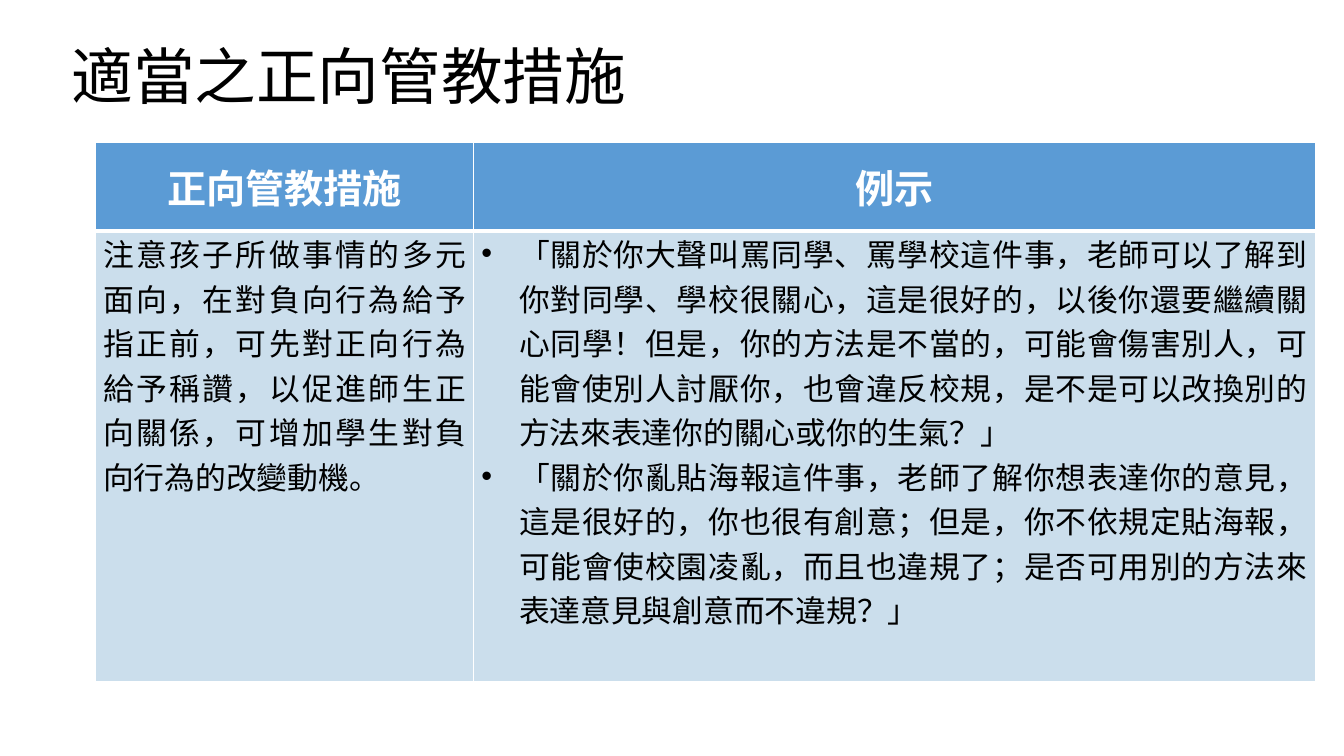
from lxml import etree
from pptx import Presentation
from pptx import util as u
from pptx.dml.color import RGBColor
from pptx.enum import text
from pptx.oxml import ns

Cm, Pt = u.Cm, u.Pt
CJK_FONT = "Noto Sans CJK SC"
WHITE, BLACK, BLUE, PALE_BLUE = "FFFFFF", "000000", "5B9BD5", "CBDEEC"
TITLE_FORMAT = {"name": "Calibri", "size": Pt(44), "bold": False}
HEADER_FORMAT = {"name": CJK_FONT, "size": Pt(28), "bold": True}
BODY_FORMAT = {"name": CJK_FONT, "size": Pt(22), "bold": False}
CELL_MARGINS = {"margin_left": Cm(0.19), "margin_right": Cm(0.19),
                "margin_top": 0, "margin_bottom": 0}
COLUMN_WIDTHS = [Cm(9.53), Cm(21.21)]
ROW_HEIGHTS = [Cm(2.24), Cm(11.35)]

TITLE = "適當之正向管教措施"
HEADERS = ["正向管教措施", "例示"]
MEASURE = ("注意孩子所做事情的多元面向，在對負向行為給予指正前，可先對正向行為給予稱讚，"
           "以促進師生正向關係，可增加學生對負向行為的改變動機。")
EXAMPLES = [
    "「關於你大聲叫罵同學、罵學校這件事，老師可以了解到你對同學、學校很關心，"
    "這是很好的，以後你還要繼續關心同學！但是，你的方法是不當的，可能會傷害別人，"
    "可能會使別人討厭你，也會違反校規，是不是可以改換別的方法來表達你的關心或你的生氣？」",
    "「關於你亂貼海報這件事，老師了解你想表達你的意見，這是很好的，你也很有創意；"
    "但是，你不依規定貼海報，可能會使校園凌亂，而且也違規了；"
    "是否可用別的方法來表達意見與創意而不違規？」",
]


def color(value):
    return RGBColor.from_string(value)


def set_attributes(target, values):
    for name, value in values.items():
        setattr(target, name, value)


def add_child(parent, tag, **attributes):
    return etree.SubElement(parent, ns.qn(tag), **attributes)


def write_paragraphs(frame, lines, font_format, font_color, alignment):
    for index, line in enumerate(lines):
        paragraph = frame.paragraphs[0] if index == 0 else frame.add_paragraph()
        paragraph.alignment = alignment
        run = paragraph.add_run()
        run.text = line
        set_attributes(run.font, font_format)
        run.font.color.rgb = color(font_color)
        add_child(run.font._element, "a:ea", typeface=CJK_FONT)


def add_bullets(frame):
    indent = Cm(0.95)
    for paragraph in frame.paragraphs:
        properties = paragraph._p.get_or_add_pPr()
        properties.set("marL", str(indent))
        properties.set("indent", str(-indent))
        add_child(properties, "a:buFont", typeface="Arial")
        add_child(properties, "a:buChar", char="•")


def add_borders(cell, top, bottom):
    """Draw white cell borders; top and bottom are widths in points."""
    properties = cell._tc.get_or_add_tcPr()
    for side, width in {"L": 1, "R": 1, "T": top, "B": bottom}.items():
        line = add_child(properties, f"a:ln{side}", w=str(Pt(width)))
        fill = add_child(line, "a:solidFill")
        add_child(fill, "a:srgbClr", val=WHITE)


def format_cell(cell, fill_color, anchor, top, bottom):
    set_attributes(cell, CELL_MARGINS)
    cell.vertical_anchor = anchor
    add_borders(cell, top, bottom)
    cell.fill.solid()
    cell.fill.fore_color.rgb = color(fill_color)


def add_title(slide):
    title = slide.shapes.title
    set_attributes(title, {"left": Cm(1.55), "top": Cm(0.81),
                           "width": Cm(14.63), "height": Cm(2.13)})
    set_attributes(title.text_frame, {
        "word_wrap": False, "auto_size": text.MSO_AUTO_SIZE.NONE,
        "vertical_anchor": text.MSO_ANCHOR.MIDDLE})
    write_paragraphs(title.text_frame, [TITLE], TITLE_FORMAT, BLACK,
                     text.PP_ALIGN.LEFT)


def add_measures_table(slide):
    table = slide.shapes.add_table(
        2, 2, Cm(2.41), Cm(3.58), sum(COLUMN_WIDTHS), sum(ROW_HEIGHTS)).table
    for column, width in zip(table.columns, COLUMN_WIDTHS):
        column.width = width
    for row, height in zip(table.rows, ROW_HEIGHTS):
        row.height = height
    for index, (header, lines) in enumerate(zip(HEADERS, [[MEASURE], EXAMPLES])):
        header_cell, body_cell = table.cell(0, index), table.cell(1, index)
        format_cell(header_cell, BLUE, text.MSO_ANCHOR.MIDDLE, 1, 3)
        write_paragraphs(header_cell.text_frame, [header], HEADER_FORMAT, WHITE,
                         text.PP_ALIGN.CENTER)
        format_cell(body_cell, PALE_BLUE, text.MSO_ANCHOR.TOP, 3, 1)
        write_paragraphs(body_cell.text_frame, lines, BODY_FORMAT, BLACK,
                         text.PP_ALIGN.JUSTIFY)
    add_bullets(table.cell(1, 1).text_frame)


def main():
    presentation = Presentation()
    set_attributes(presentation, {"slide_width": Cm(33.87),
                                  "slide_height": Cm(19.05)})
    slide = presentation.slides.add_slide(presentation.slide_layouts[5])
    add_title(slide)
    add_measures_table(slide)
    presentation.save("out.pptx")


if __name__ == "__main__":
    main()
